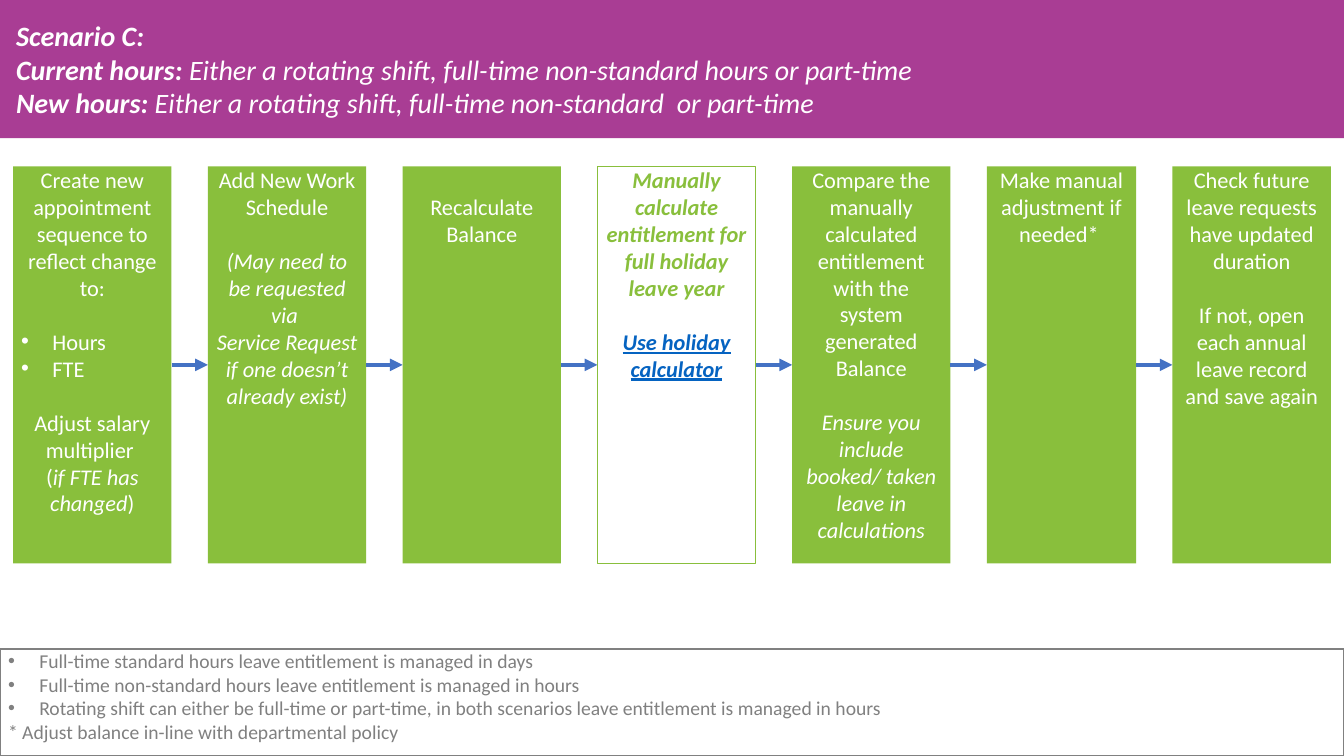
from dataclasses import dataclass

from lxml import etree
from pptx import Presentation
from pptx.dml.color import RGBColor
from pptx.enum.shapes import MSO_CONNECTOR as Connector, MSO_SHAPE as Shape
from pptx.enum.text import MSO_ANCHOR as Anchor, PP_ALIGN as Align
from pptx.oxml.ns import qn
from pptx.util import Inches, Pt


@dataclass(frozen=True)
class Theme:
    font: str = "Calibri"
    purple: str = "A93D94"
    green: str = "89BF3C"
    blue: str = "4472C4"
    link: str = "0563C1"
    grey: str = "808080"
    white: str = "FFFFFF"
    title_size: int = 20
    step_size: int = 16
    note_size: int = 14
    blank_line: float = 19.5
    border: int = 1
    arrow: int = 3


@dataclass(frozen=True)
class Line:
    text: str | tuple
    italic: bool = False
    bold: bool = False
    bullet: bool = False
    gap: bool = False
    link: bool = False


THEME = Theme()

SCENARIO = [
    ("Scenario C:", ""),
    ("Current hours: ", "Either a rotating shift, full-time non-standard hours or part-time"),
    ("New hours: ", "Either a rotating shift, full-time non-standard  or part-time"),
]

STEPS = [
    [
        Line("Create new appointment sequence to reflect change to:"),
        Line("Hours", bullet=True, gap=True),
        Line("FTE", bullet=True),
        Line("Adjust salary multiplier ", gap=True),
        Line((("(", False), ("if FTE has changed", True), (")", False))),
    ],
    [
        Line("Add New Work Schedule"),
        Line("(May need to be requested via ", italic=True, gap=True),
        Line("Service Request if one doesn’t already exist)", italic=True),
    ],
    [Line("Recalculate Balance")],
    [
        Line("Manually calculate entitlement for full holiday leave year", italic=True, bold=True),
        Line("Use holiday calculator", italic=True, bold=True, gap=True, link=True),
    ],
    [
        Line("Compare the manually calculated entitlement with the system generated Balance"),
        Line("Ensure you include booked/ taken leave in calculations", italic=True, gap=True),
    ],
    [Line("Make manual adjustment if needed* ")],
    [
        Line("Check future leave requests have updated duration"),
        Line("If not, open each annual leave record and save again", gap=True),
    ],
]
LOWERED_STEP, OUTLINED_STEP, NARROW_STEP = 2, 3, 5

NOTES = [
    Line("Full-time standard hours leave entitlement is managed in days", bullet=True),
    Line("Full-time non-standard hours leave entitlement is managed in hours", bullet=True),
    Line("Rotating shift can either be full-time or part-time, in both scenarios "
         "leave entitlement is managed in hours", bullet=True),
    Line("* Adjust balance in-line with departmental policy"),
]

SLIDE_W, SLIDE_H = 13.33, 7.5
HEADER_H = 1.37
NOTES_TOP = 6.44
MARGIN, GAP = 0.13, 0.36
STEP_TOP, STEP_H = 1.65, 3.94
NARROWING = 0.09
STEP_W = (SLIDE_W - 2 * MARGIN - GAP * (len(STEPS) - 1) + NARROWING) / len(STEPS)
INSET, INDENT = 0.08, 0.31


def color(code):
    return RGBColor.from_string(code)


def add_panel(slide, left, top, width, height, fill=None, border=None,
              inset=(INSET, 0, INSET), anchor=Anchor.TOP):
    panel = slide.shapes.add_shape(
        Shape.RECTANGLE, Inches(left), Inches(top), Inches(width), Inches(height))
    panel.shadow.inherit = False
    if fill:
        panel.fill.solid()
        panel.fill.fore_color.rgb = color(fill)
    else:
        panel.fill.background()
    if border:
        panel.line.color.rgb = color(border)
        panel.line.width = Pt(THEME.border)
    else:
        panel.line.fill.background()
    frame = panel.text_frame
    frame.word_wrap = True
    frame.vertical_anchor = anchor
    frame.margin_left, frame.margin_top, frame.margin_right = map(Inches, inset)
    frame.margin_bottom = 0
    return frame


def add_paragraph(frame, index, size, ink, align):
    paragraph = frame.add_paragraph() if index else frame.paragraphs[0]
    paragraph.alignment = align
    font = paragraph.font
    font.name, font.size = THEME.font, Pt(size)
    font.color.rgb = color(ink)
    return paragraph


def add_bullet(paragraph):
    properties = paragraph._p.get_or_add_pPr()
    properties.set("marL", str(Inches(INDENT)))
    properties.set("indent", str(-Inches(INDENT)))
    bullet_font = etree.Element(qn("a:buFont"), typeface="Arial")
    bullet = etree.Element(qn("a:buChar"), char="•")
    defaults = properties.find(qn("a:defRPr"))
    defaults.addprevious(bullet_font)
    defaults.addprevious(bullet)


def write_lines(frame, lines, size, ink, align):
    for index, line in enumerate(lines):
        paragraph = add_paragraph(
            frame, index, size, THEME.link if line.link else ink,
            Align.LEFT if line.bullet else align)
        paragraph.font.bold = line.bold
        if line.link:
            paragraph.font.underline = True
        if line.gap:
            paragraph.space_before = Pt(THEME.blank_line)
        if line.bullet:
            add_bullet(paragraph)
        if isinstance(line.text, str):
            paragraph.font.italic = line.italic
            paragraph.add_run().text = line.text
        else:
            for words, italic in line.text:
                run = paragraph.add_run()
                run.text, run.font.italic = words, italic


def add_arrow(slide, start, end, height):
    arrow = slide.shapes.add_connector(
        Connector.STRAIGHT, Inches(start), Inches(height), Inches(end), Inches(height))
    arrow.line.color.rgb = color(THEME.blue)
    arrow.line.width = Pt(THEME.arrow)
    etree.SubElement(arrow.line._get_or_add_ln(), qn("a:tailEnd"), type="triangle")
    etree.SubElement(arrow._element.spPr, qn("a:effectLst"))


def add_header(slide):
    header = add_panel(slide, 0, 0, SLIDE_W, HEADER_H, fill=THEME.purple,
                       inset=(0.16, 0, 0), anchor=Anchor.MIDDLE)
    for index, (label, detail) in enumerate(SCENARIO):
        paragraph = add_paragraph(header, index, THEME.title_size, THEME.white, Align.LEFT)
        paragraph.font.italic = True
        for words, bold in ((label, True), (detail, False)):
            if words:
                run = paragraph.add_run()
                run.text, run.font.bold = words, bold


def add_steps(slide):
    left = MARGIN
    for index, lines in enumerate(STEPS):
        outlined = index == OUTLINED_STEP
        width = STEP_W - (NARROWING if index == NARROW_STEP else 0)
        top_inset = THEME.blank_line / 72 if index == LOWERED_STEP else 0
        step = add_panel(slide, left, STEP_TOP, width, STEP_H,
                         fill=None if outlined else THEME.green,
                         border=THEME.green if outlined else None,
                         inset=(INSET, top_inset, INSET))
        write_lines(step, lines, THEME.step_size,
                    THEME.green if outlined else THEME.white, Align.CENTER)
        if index < len(STEPS) - 1:
            add_arrow(slide, left + width, left + width + GAP, STEP_TOP + STEP_H / 2)
        left += width + GAP


def main():
    deck = Presentation()
    deck.slide_width, deck.slide_height = Inches(SLIDE_W), Inches(SLIDE_H)
    slide = deck.slides.add_slide(deck.slide_layouts[6])
    add_header(slide)
    add_steps(slide)
    notes = add_panel(slide, 0, NOTES_TOP, SLIDE_W, SLIDE_H - NOTES_TOP, border=THEME.grey)
    write_lines(notes, NOTES, THEME.note_size, THEME.grey, Align.LEFT)
    deck.save("out.pptx")


if __name__ == "__main__":
    main()
